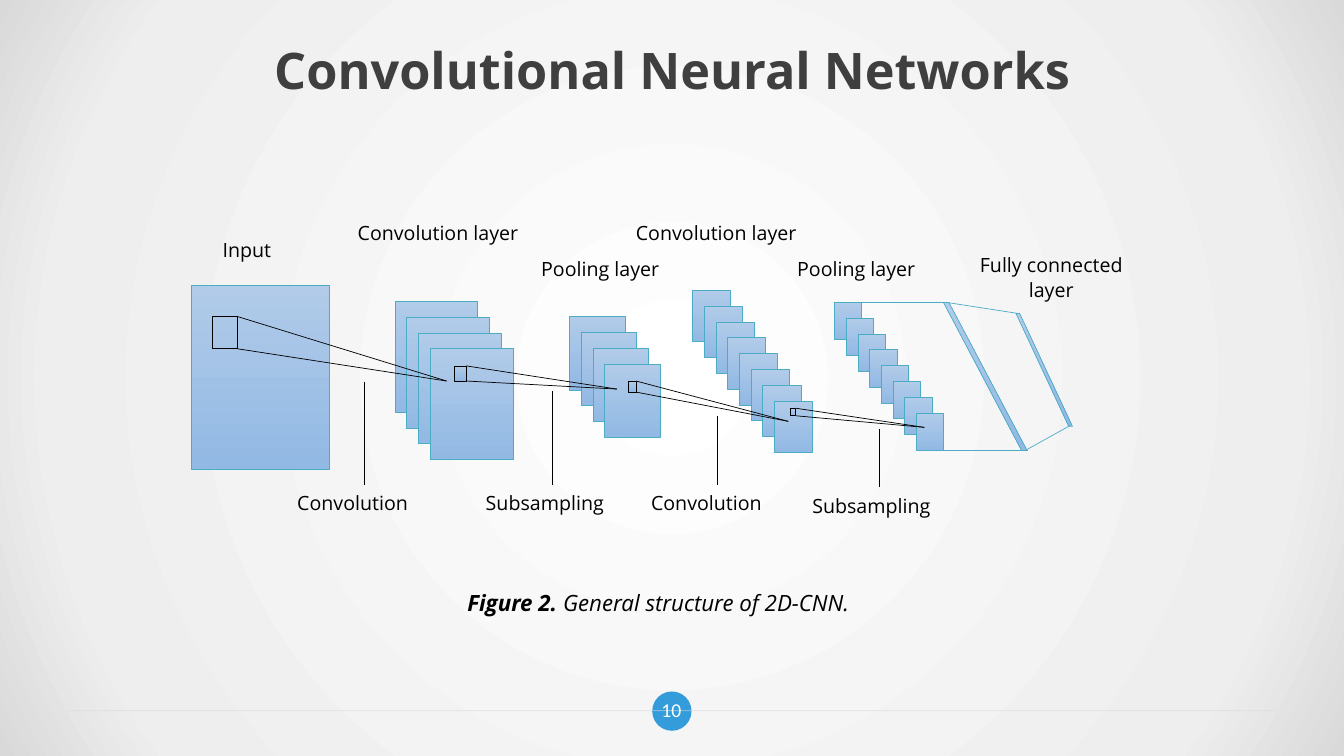
import lxml.etree
import pptx
import pptx.dml.color
import pptx.enum.shapes
import pptx.enum.text
import pptx.oxml
import pptx.oxml.ns
import pptx.util

SHAPES = pptx.enum.shapes.MSO_SHAPE
ALIGN = pptx.enum.text.PP_ALIGN
rgb = pptx.dml.color.RGBColor.from_string
qn = pptx.oxml.ns.qn

presentation = pptx.Presentation()
cell = pptx.util.Inches(0.1)  # the grid has 133.33 columns and 75 rows
presentation.slide_width = int(133.33 * cell)
presentation.slide_height = 75 * cell
slide = presentation.slides.add_slide(presentation.slide_layouts[6])

TEAL, BLACK = "4BACC6", "000000"


def on_grid(*cells):
    return [int(value * cell) for value in cells]


def add_block(kind, box, line_colour, filled=True):
    """Add an outlined shape, filled with the blue gradient unless told otherwise."""
    block = slide.shapes.add_shape(kind, *on_grid(*box))
    block.shadow.inherit = False
    block.line.color.rgb = rgb(line_colour)
    block.line.width = pptx.util.Pt(0.5)
    if filled:
        block.fill.gradient()
        block.fill.gradient_angle = 270
        for stop, colour in zip(block.fill.gradient_stops, ("B1CBE9", "92B9E4")):
            stop.color.rgb = rgb(colour)
    else:
        block.fill.background()
    return block


# Background: radial gradient from the centre
slide.background.fill.gradient()
gradient = slide.element.find(".//" + qn("a:gradFill"))
for child in list(gradient):
    gradient.remove(child)
stop_list = lxml.etree.SubElement(gradient, qn("a:gsLst"))
for position, colour in ((0, "FFFFFF"), (81, "EEEEEE"), (100, "D9D9D9")):
    stop = lxml.etree.SubElement(stop_list, qn("a:gs"), pos=str(position * 1000))
    lxml.etree.SubElement(stop, qn("a:srgbClr"), val=colour)
radial = lxml.etree.SubElement(gradient, qn("a:path"), path="circle")
lxml.etree.SubElement(radial, qn("a:fillToRect"), l="50000", t="50000", r="50000", b="50000")

# Page number disc
disc = slide.shapes.add_shape(SHAPES.OVAL, *on_grid(64.7, 68.6, 3.9, 3.9))
disc.shadow.inherit = False
disc.fill.solid()
disc.fill.fore_color.rgb = rgb("359CDB")
disc.line.fill.background()

# Stacks of feature maps: left, top, width, height, number of maps
stacks = [
    (19, 28.3, 13.7, 18.3, 1),
    (39.2, 29.9, 8.2, 11, 4),
    (56.5, 31.4, 5.5, 7.3, 4),
    (68.7, 28.8, 3.8, 5.1, 8),
    (82.8, 30, 2.7, 3.7, 8),
]
for left, top, width, height, count in stacks:
    for index in range(count):
        box = (left + 1.16 * index, top + 1.57 * index, width, height)
        add_block(SHAPES.RECTANGLE, box, TEAL)

# Lines: start column, start row, end column, end row, colour, width
lines = [(6.7, 70.5, 126.6, 70.5, "D9D9D9", 0.75)]

# Receptive windows, each projected to one point of the next layer
windows = [
    ((21.1, 31.4, 2.45, 3.2), (44.3, 37.8)),
    ((45.1, 36.3, 1.15, 1.5), (61.2, 38.6)),
    ((62.3, 37.8, 0.8, 1.1), (78.2, 41.8)),
    ((78.4, 40.5, 0.55, 0.75), (91.7, 42.4)),
]
for number, (window, target) in enumerate(windows):
    add_block(SHAPES.RECTANGLE, window, BLACK, filled=number > 0)
    left, top, width, height = window
    for row in (top, top + height):
        lines.append((left + width, row, *target, BLACK, 0.5))

# Fully connected layers
for box in ((93.6, 30, 8.3, 14.7), (100.8, 31.1, 5.6, 11.2)):
    layer = add_block(SHAPES.PARALLELOGRAM, box, TEAL)
    layer.adjustments[0] = 0.935
    layer.element.spPr.find(qn("a:xfrm")).set("flipH", "1")
for ends in ((84.2, 30, 93.9, 30), (92.2, 44.7, 102, 44.7),
             (93.9, 30, 101, 31.1), (101.7, 44.7, 106.2, 42.2)):
    lines.append((*ends, TEAL, 0.5))

# Labels: text, left, top, width, height, alignment
labels = [
    ("Input", 21.1, 22.9, 9.5, 3.4, ALIGN.JUSTIFY),
    ("Convolution layer", 34.5, 21.3, 20, 3.4, ALIGN.JUSTIFY),
    ("Convolution layer", 62.1, 21.3, 20, 3.4, ALIGN.JUSTIFY),
    ("Pooling layer", 51.5, 24.8, 16.1, 3.4, ALIGN.CENTER),
    ("Pooling layer", 76.9, 24.8, 16.1, 3.4, ALIGN.CENTER),
    ("Fully connected layer", 94.3, 24.4, 20, 5.9, ALIGN.CENTER),
]

# Operations below the layers, each with a leader line: text, left, top, leader start
operations = [
    ("Convolution", 28.5, 48.1, 37.9),
    ("Subsampling", 47.2, 48.1, 38.8),
    ("Convolution", 63.6, 48.1, 41.3),
    ("Subsampling", 79.6, 48.3, 42.6),
]
for text, left, top, leader_start in operations:
    labels.append((text, left, top, 15.1, 3.4, ALIGN.JUSTIFY))
    lines.append((left + 7.6, leader_start, left + 7.6, top, BLACK, 0.5))

for *ends, colour, width in lines:
    line = slide.shapes.add_connector(pptx.enum.shapes.MSO_CONNECTOR.STRAIGHT, *on_grid(*ends))
    line.line.color.rgb = rgb(colour)
    line.line.width = pptx.util.Pt(width)
    if colour == "D9D9D9":
        lxml.etree.SubElement(line.element.find(".//" + qn("a:srgbClr")), qn("a:alpha"), val="50000")
    lxml.etree.SubElement(line.element.spPr, qn("a:effectLst"))

# All text: runs, box, alignment, size, font, colour, line spacing, centred vertically
texts = [
    ([("Convolutional Neural Networks", True)], (6.7, 3, 120, 7.8),
     ALIGN.CENTER, 36, "Open Sans", "3F3F3F", 1, True),
    ([("10", False)], (63.8, 68.3, 5.6, 4.2), ALIGN.CENTER, 14, "Calibri", "FFFFFF", 1, True),
    ([("Figure 2. ", True), ("General structure of 2D-CNN.", False)], (32, 55.3, 66.6, 5.6),
     ALIGN.CENTER, 16, "Open Sans", BLACK, 2, False),
]
for text, *box, alignment in labels:
    texts.append(([(text, False)], box, alignment, 14, "Open Sans", BLACK, 1.07, False))

for runs, box, alignment, size, font, colour, spacing, centred in texts:
    frame = slide.shapes.add_textbox(*on_grid(*box)).text_frame
    frame.word_wrap = True
    if centred:
        frame.vertical_anchor = pptx.enum.text.MSO_ANCHOR.MIDDLE
    paragraph = frame.paragraphs[0]
    paragraph.alignment = alignment
    paragraph.line_spacing = spacing
    for text, bold in runs:
        run = paragraph.add_run()
        run.text = text
        run.font.size = pptx.util.Pt(size)
        run.font.name = font
        run.font.bold = bold
        run.font.italic = size == 16
        run.font.color.rgb = rgb(colour)

presentation.save("out.pptx")
